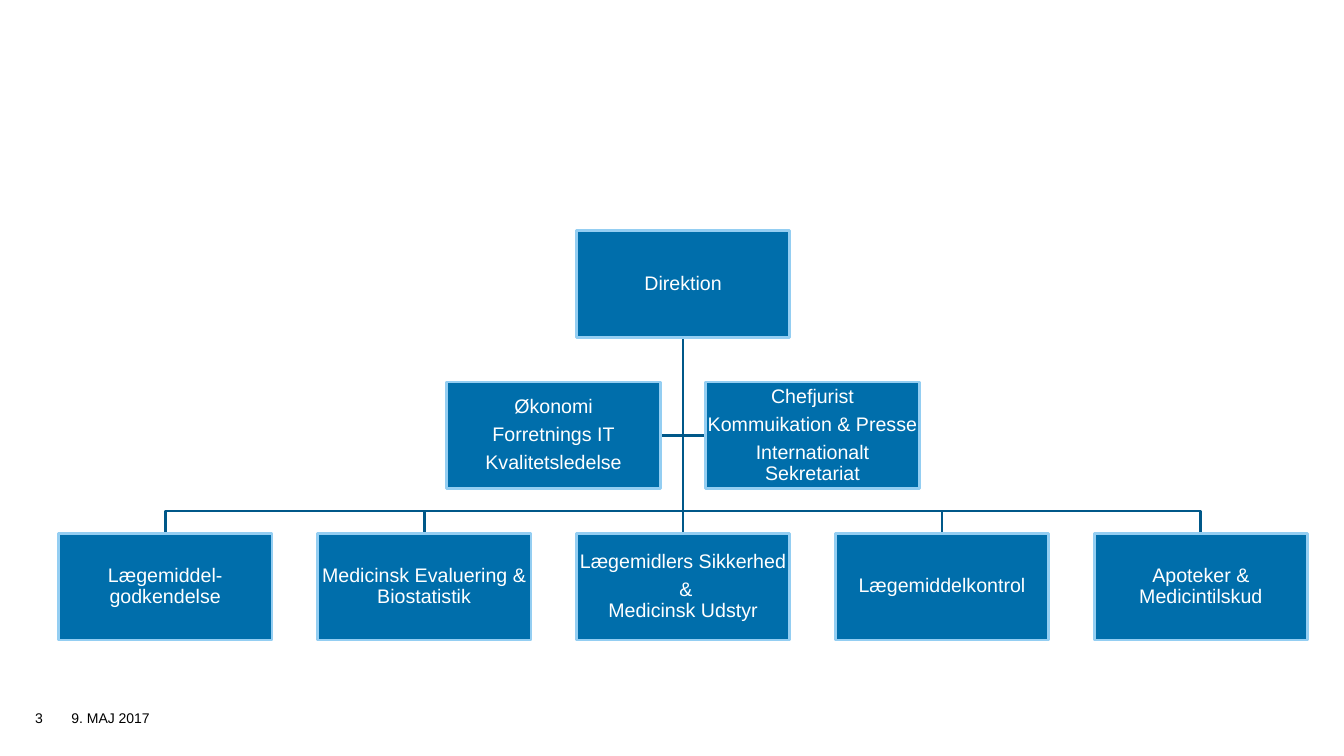
from lxml import etree
from pptx import Presentation
from pptx.dml.color import RGBColor
from pptx.enum import shapes, text
from pptx.oxml import ns
from pptx.util import Inches, Pt

FONT = "Arial"
BOX_FILL, BOX_LINE, LINK = "006EAB", "94CEF2", "005889"
WHITE, BLACK = "FFFFFF", "000000"

# Content: each box is a list of paragraphs
DIRECTION = ["Direktion"]
STAFF = [
    ["Økonomi", "Forretnings IT", "Kvalitetsledelse"],
    ["Chefjurist", "Kommuikation & Presse", "Internationalt Sekretariat"],
]
UNITS = [
    ["Lægemiddel-godkendelse"],
    ["Medicinsk Evaluering & Biostatistik"],
    ["Lægemidlers Sikkerhed", " &\nMedicinsk Udstyr"],
    ["Lægemiddelkontrol"],
    ["Apoteker &\nMedicintilskud"],
]
FOOTER = [("9. MAJ 2017", 0.71, 1.5), ("3", 0.35, 0.5)]  # text, left, width

# Layout: equal columns, with the staff boxes half a column off
LEFT, PITCH = 0.58, 2.57
BOX_W, BOX_H = 2.12, 1.06
TOP_ROW, STAFF_ROW, UNIT_ROW = 2.29, 3.79, 5.29
BUS_Y = 5.07
MIDDLE = 2
TOP, BOTTOM = 0, 2


def color(value):
    return RGBColor.from_string(value)


def column_left(column):
    return LEFT + PITCH * column


def column_center(column):
    return column_left(column) + BOX_W / 2


def write(shape, lines, size, ink, anchor, inset=0):
    frame = shape.text_frame
    frame.word_wrap = True
    frame.vertical_anchor = anchor
    frame.margin_left = frame.margin_right = Inches(inset)
    frame.margin_top = frame.margin_bottom = Inches(inset)
    for index, line in enumerate(lines):
        para = frame.add_paragraph() if index else frame.paragraphs[0]
        para.text = line
        para.font.name = FONT
        para.font.size = Pt(size)
        para.font.color.rgb = color(ink)
    return frame.paragraphs


def add_box(page, lines, column, top):
    box = page.shapes.add_shape(
        shapes.MSO_SHAPE.RECTANGLE, Inches(column_left(column)), Inches(top),
        Inches(BOX_W), Inches(BOX_H))
    box.shadow.inherit = False
    box.fill.solid()
    box.fill.fore_color.rgb = color(BOX_FILL)
    set_line(box, BOX_LINE)
    for para in write(box, lines, 14, WHITE, text.MSO_ANCHOR.MIDDLE, 0.01):
        para.alignment = text.PP_ALIGN.CENTER
        para.line_spacing = 0.9
        para.space_after = Pt(4.9)
    return box


def set_line(shape, ink):
    shape.line.color.rgb = color(ink)
    shape.line.width = Pt(2)


def add_elbow(page, points):
    start, *rest = [(Inches(x), Inches(y)) for x, y in points]
    builder = page.shapes.build_freeform(*start)
    builder.add_line_segments(rest, close=False)
    elbow = builder.convert_to_shape()
    elbow.shadow.inherit = False
    elbow.fill.background()
    set_line(elbow, LINK)


def main():
    deck = Presentation()
    deck.slide_width, deck.slide_height = Inches(13.34), Inches(7.5)
    page = deck.slides.add_slide(deck.slide_layouts[6])

    # Footer
    for line, left, width in FOOTER:
        box = page.shapes.add_textbox(
            Inches(left), Inches(6.97), Inches(width), Inches(0.24))
        write(box, [line], 10, BLACK, text.MSO_ANCHOR.BOTTOM)

    # Elbow links from the direction to the staff and the outer units
    trunk_x, trunk_y = column_center(MIDDLE), TOP_ROW + BOX_H
    staff_y = STAFF_ROW + BOX_H / 2
    for end_x in (column_left(MIDDLE + 0.5),
                  column_left(MIDDLE - 0.5) + BOX_W):
        add_elbow(page, [(trunk_x, trunk_y), (trunk_x, staff_y),
                         (end_x, staff_y)])
    for index in range(len(UNITS)):
        if index != MIDDLE:
            x = column_center(index)
            add_elbow(page, [(trunk_x, trunk_y), (trunk_x, BUS_Y),
                             (x, BUS_Y), (x, UNIT_ROW)])

    # Straight link to the middle unit
    trunk = page.shapes.add_connector(
        shapes.MSO_CONNECTOR.STRAIGHT, Inches(trunk_x), Inches(trunk_y),
        Inches(trunk_x), Inches(UNIT_ROW))
    set_line(trunk, LINK)
    etree.SubElement(trunk._element.spPr, ns.qn("a:effectLst"))

    # Boxes
    direction = add_box(page, DIRECTION, MIDDLE, TOP_ROW)
    units = [add_box(page, lines, index, UNIT_ROW)
             for index, lines in enumerate(UNITS)]
    for index, lines in enumerate(STAFF):
        add_box(page, lines, MIDDLE - 0.5 + index, STAFF_ROW)
    trunk.begin_connect(direction, BOTTOM)
    trunk.end_connect(units[MIDDLE], TOP)

    deck.save("out.pptx")


if __name__ == "__main__":
    main()
